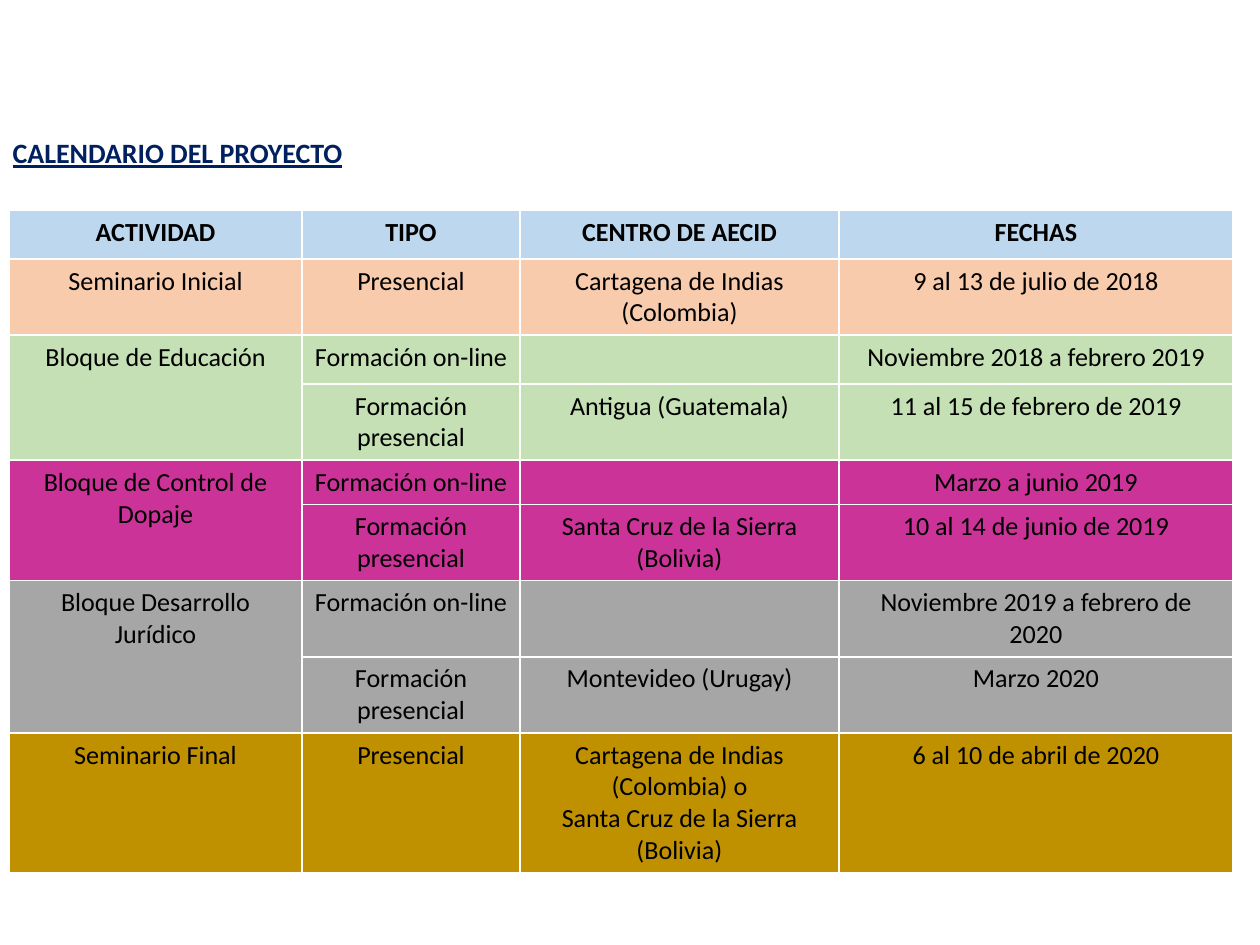
from lxml import etree
from pptx import Presentation
from pptx import util as u
from pptx.dml.color import RGBColor
from pptx.enum import text
from pptx.oxml import ns

PX_PER_INCH = 126
FONT = "Calibri"
BODY_SIZE = 14.9
BLACK = RGBColor(0x00, 0x00, 0x00)
NAVY = RGBColor(0x00, 0x20, 0x60)
LIGHT_BLUE = RGBColor(0xBD, 0xD7, 0xEE)
PEACH = RGBColor(0xF8, 0xCB, 0xAD)
GREEN = RGBColor(0xC5, 0xE0, 0xB4)
MAGENTA = RGBColor(0xCC, 0x33, 0x99)
GREY = RGBColor(0xA6, 0xA6, 0xA6)
GOLD = RGBColor(0xBF, 0x90, 0x00)

ONLINE, ONSITE = "Formación on-line", "Formación presencial"
BLOCKS = [
    (LIGHT_BLUE, "ACTIVIDAD", [("TIPO", "CENTRO DE AECID", "FECHAS")]),
    (PEACH, "Seminario Inicial", [
        ("Presencial", "Cartagena de Indias (Colombia)", "9 al 13 de julio de 2018")]),
    (GREEN, "Bloque de Educación", [
        (ONLINE, "", "Noviembre 2018 a febrero 2019"),
        (ONSITE, "Antigua (Guatemala)", "11 al 15 de febrero de 2019")]),
    (MAGENTA, "Bloque de Control de Dopaje", [
        (ONLINE, "", "Marzo a junio 2019"),
        (ONSITE, "Santa Cruz de la Sierra (Bolivia)", "10 al 14 de junio de 2019")]),
    (GREY, "Bloque Desarrollo Jurídico", [
        (ONLINE, "", "Noviembre 2019 a febrero de 2020"),
        (ONSITE, "Montevideo (Urugay)", "Marzo 2020")]),
    (GOLD, "Seminario Final", [
        ("Presencial",
         "Cartagena de Indias (Colombia) o\nSanta Cruz de la Sierra (Bolivia)",
         "6 al 10 de abril de 2020")]),
]
COLUMN_WIDTHS = [293, 218, 319, 394]
ROW_HEIGHTS = [49, 75, 49, 76, 44, 75, 44, 75, 138]


def px(length):
    return u.Emu(round(length * u.Inches(1) / PX_PER_INCH))


def add_run(paragraph, wording, size, color, bold, underline=False):
    run = paragraph.add_run()
    run.text = wording
    font = run.font
    font.name, font.size, font.bold = FONT, u.Pt(size), bold
    font.color.rgb = color
    if underline:
        font.underline = True


def set_heading(slide, wording):
    heading = slide.shapes.title
    heading.left, heading.top = px(0), px(129)
    heading.width, heading.height = px(1203), px(47)
    frame = heading.text_frame
    frame.word_wrap = True
    frame.auto_size = text.MSO_AUTO_SIZE.NONE
    frame.vertical_anchor = text.MSO_ANCHOR.TOP
    paragraph = frame.paragraphs[0]
    paragraph.alignment = text.PP_ALIGN.LEFT
    add_run(paragraph, wording, 16, NAVY, True, True)


def fill_cell(cell, wording, color, bold):
    cell.fill.solid()
    cell.fill.fore_color.rgb = color
    frame = cell.text_frame
    for index, line in enumerate(wording.split("\n")):
        paragraph = frame.add_paragraph() if index else frame.paragraphs[0]
        paragraph.alignment = text.PP_ALIGN.CENTER
        if line:
            add_run(paragraph, line, BODY_SIZE, BLACK, bold)
        else:
            end = etree.SubElement(paragraph._p, ns.qn("a:endParaRPr"))
            end.set("sz", str(round(BODY_SIZE * 100)))


def add_calendar(slide):
    calendar = slide.shapes.add_table(
        len(ROW_HEIGHTS), len(COLUMN_WIDTHS), px(9), px(210),
        px(sum(COLUMN_WIDTHS)), px(sum(ROW_HEIGHTS))).table
    calendar.horz_banding = False
    for column, width in zip(calendar.columns, COLUMN_WIDTHS):
        column.width = px(width)
    for row, height in zip(calendar.rows, ROW_HEIGHTS):
        row.height = px(height)
    first = 0
    for color, activity, sessions in BLOCKS:
        for offset, session in enumerate(sessions):
            wordings = ("" if offset else activity, *session)
            for column, wording in enumerate(wordings):
                cell = calendar.cell(first + offset, column)
                fill_cell(cell, wording, color, first == 0)
        last = first + len(sessions) - 1
        if last > first:
            calendar.cell(first, 0).merge(calendar.cell(last, 0))
        first = last + 1


def main():
    deck = Presentation()
    deck.slide_width, deck.slide_height = u.Inches(10), u.Inches(7.5)
    slide = deck.slides.add_slide(deck.slide_layouts[5])
    set_heading(slide, "CALENDARIO DEL PROYECTO")
    add_calendar(slide)
    deck.save("out.pptx")


if __name__ == "__main__":
    main()
